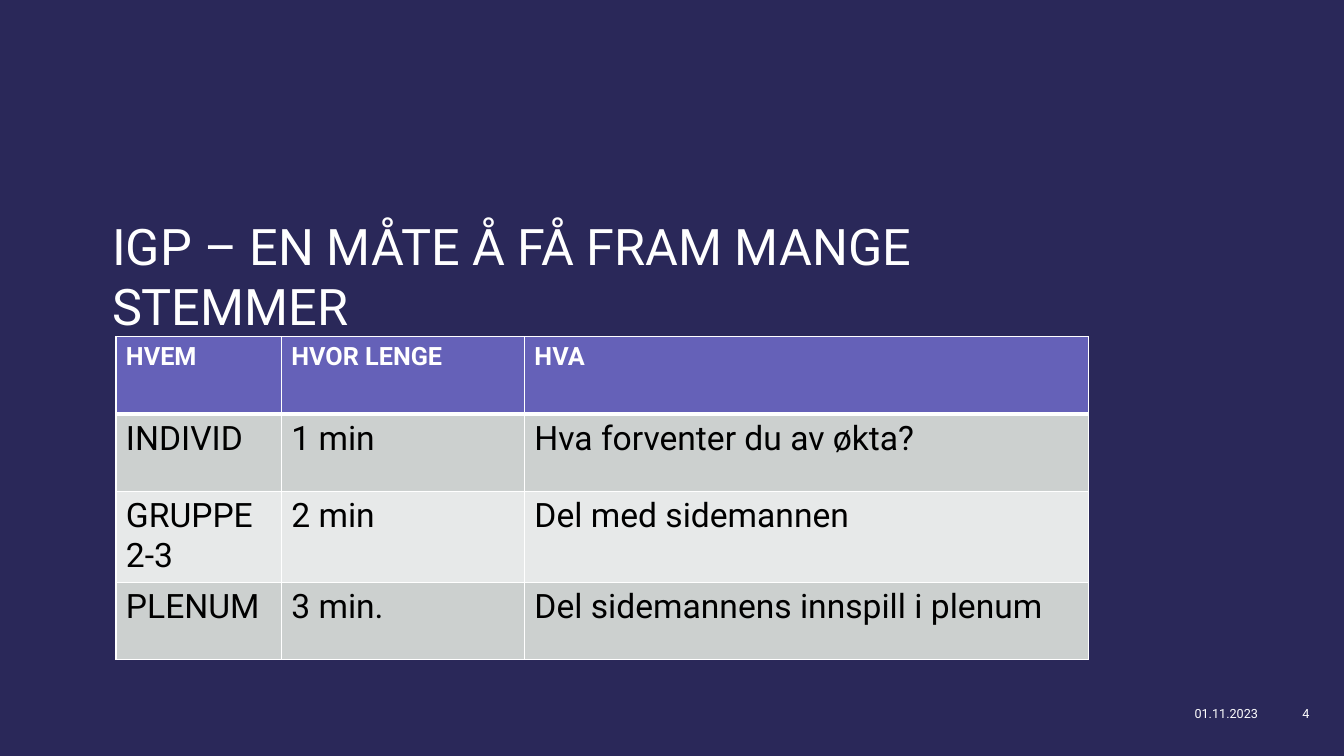
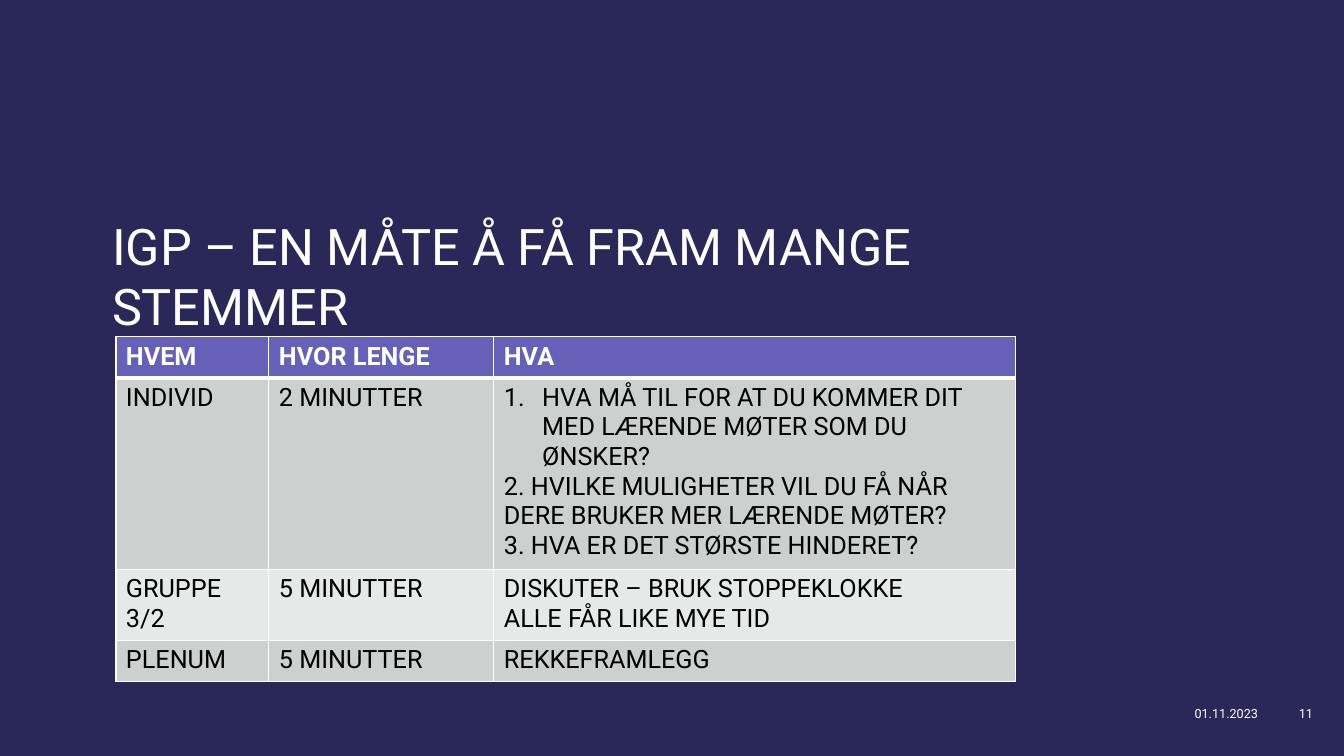
import dataclasses
import pptx
import pptx.dml.color
import pptx.enum.text
import pptx.oxml
import pptx.oxml.ns
import pptx.util

ALIGN = pptx.enum.text.PP_ALIGN
ANCHOR = pptx.enum.text.MSO_ANCHOR


@dataclasses.dataclass(frozen=True)
class Theme:
    font: str = "Roboto"
    back: str = "2A2859"
    light: str = "FFFFFF"
    dark: str = "000000"
    head: str = "6561B8"
    bands: tuple = ("CCD0CF", "E7E9E9")
    title: int = 36
    label: int = 18
    small: int = 9
    thin: int = 1
    thick: int = 3


class Deck:
    COLS, ROWS = 120, 90
    SHARES = (0.17, 0.25, 0.58)

    def __init__(self, theme):
        self.theme = theme
        self.file = pptx.Presentation()
        self.file.slide_width = pptx.util.Inches(13.33)
        self.file.slide_height = pptx.util.Inches(7.5)
        self.paint(self.file.slide_master.background.fill, theme.back)
        self.slide = None

    def across(self, cols):
        return int(self.file.slide_width * cols / self.COLS)

    def down(self, rows):
        return int(self.file.slide_height * rows / self.ROWS)

    def area(self, left, top, wide, high):
        return self.across(left), self.down(top), self.across(wide), self.down(high)

    def paint(self, fill, color):
        fill.solid()
        fill.fore_color.rgb = pptx.dml.color.RGBColor.from_string(color)

    def label(self, frame, text, size, color, bold=False, align=ALIGN.LEFT):
        frame.text = text
        frame.word_wrap = True
        for para in frame.paragraphs:
            para.alignment = align
            font = para.font
            font.name = self.theme.font
            font.size = pptx.util.Pt(size)
            font.bold = bold
            font.color.rgb = pptx.dml.color.RGBColor.from_string(color)

    def page(self, title, date, number):
        self.slide = self.file.slides.add_slide(self.file.slide_layouts[5])
        self.title(title)
        self.note(date, (100, 82.5, 13.2, 4.8), ALIGN.RIGHT)
        self.note(number, (113.2, 82.5, 6.8, 4.8), ALIGN.CENTER)

    def title(self, text):
        shape = self.slide.shapes.title
        shape.left, shape.top, shape.width, shape.height = self.area(10, 0, 90, 40)
        frame = shape.text_frame
        frame.auto_size = pptx.enum.text.MSO_AUTO_SIZE.NONE
        frame.vertical_anchor = ANCHOR.BOTTOM
        frame.margin_left = frame.margin_right = 0
        frame.margin_top = frame.margin_bottom = 0
        self.label(frame, text, self.theme.title, self.theme.light)

    def note(self, text, grid, align):
        frame = self.slide.shapes.add_textbox(*self.area(*grid)).text_frame
        frame.vertical_anchor = ANCHOR.MIDDLE
        self.label(frame, text, self.theme.small, self.theme.light, align=align)

    def table(self, rows, wide, highs, size):
        grid = self.area(10.35, 40.1, wide, sum(highs))
        table = self.slide.shapes.add_table(
            len(rows), len(self.SHARES), *grid).table
        for col, share in zip(table.columns, self.SHARES):
            col.width = self.across(wide * share)
        for r, (row, high) in enumerate(zip(rows, highs)):
            table.rows[r].height = self.down(high)
            for c, text in enumerate(row):
                self.cell(table.cell(r, c), text, r, size)
        return table

    def cell(self, cell, text, row, size):
        theme = self.theme
        if row == 0:
            self.label(cell.text_frame, text, theme.label, theme.light, True)
            fill = theme.head
        else:
            self.label(cell.text_frame, text, size, theme.dark)
            fill = theme.bands[(row - 1) % len(theme.bands)]
        thick = {0: "lnB", 1: "lnT"}.get(row)
        props = cell._tc.get_or_add_tcPr()
        for side in ("lnL", "lnR", "lnT", "lnB"):
            width = theme.thick if side == thick else theme.thin
            props.append(pptx.oxml.parse_xml(
                f'<a:{side} {pptx.oxml.ns.nsdecls("a")} w="{pptx.util.Pt(width)}">'
                f'<a:solidFill><a:srgbClr val="{theme.light}"/></a:solidFill>'
                f'</a:{side}>'))
        self.paint(cell.fill, fill)

    def number(self, para):
        props = para._p.get_or_add_pPr()
        hang = pptx.util.Inches(0.38)
        props.set("marL", str(hang))
        props.set("indent", str(-hang))
        props.insert(0, pptx.oxml.parse_xml(
            f'<a:buAutoNum {pptx.oxml.ns.nsdecls("a")} type="arabicPeriod"/>'))


def main():
    deck = Deck(Theme())
    title = "IGP – EN MÅTE Å FÅ FRAM MANGE STEMMER"
    date = "01.11.2023"
    heads = ("HVEM", "HVOR LENGE", "HVA")

    deck.page(title, date, "4")
    deck.table([
        heads,
        ("INDIVID", "1 min", "Hva forventer du av økta?"),
        ("GRUPPE\n2-3", "2 min", "Del med sidemannen"),
        ("PLENUM", "3 min.", "Del sidemannens innspill i plenum"),
    ], 86.85, (9.2, 9.2, 10.6, 9.2), 24)

    deck.page(title, date, "11")
    table = deck.table([
        heads,
        ("INDIVID", "2 MINUTTER",
         "HVA MÅ TIL FOR AT DU KOMMER DIT MED LÆRENDE MØTER SOM DU ØNSKER?\n"
         "2. HVILKE MULIGHETER VIL DU FÅ NÅR DERE BRUKER MER LÆRENDE MØTER?\n"
         "3. HVA ER DET STØRSTE HINDERET?"),
        ("GRUPPE\n3/2", "5 MINUTTER",
         "DISKUTER – BRUK STOPPEKLOKKE\nALLE FÅR LIKE MYE TID"),
        ("PLENUM", "5 MINUTTER", "REKKEFRAMLEGG"),
    ], 80.35, (4.9, 22.3, 8.3, 4.9), 18)
    deck.number(table.cell(1, 2).text_frame.paragraphs[0])

    deck.file.save("out.pptx")


if __name__ == "__main__":
    main()
